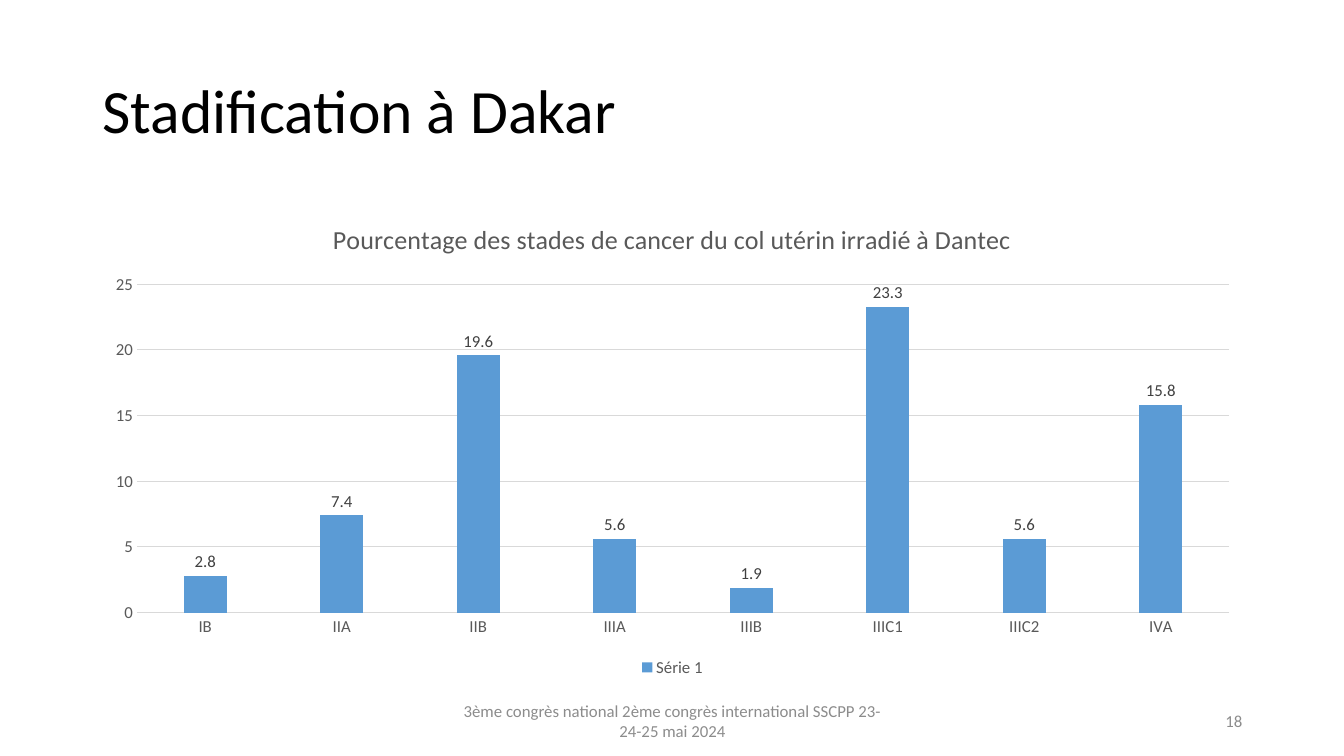
import pptx
import pptx.util
import pptx.chart.data
import pptx.dml.color
import pptx.enum.chart
import pptx.enum.text

Inches, Pt = pptx.util.Inches, pptx.util.Pt
ALIGN = pptx.enum.text.PP_ALIGN
COLORS = {"title": "000000", "footer": "8C8C8C", "axis": "595959",
          "label": "404040", "grid": "D9D9D9", "bar": "5B9BD5"}


def rgb(name):
    return pptx.dml.color.RGBColor.from_string(COLORS[name])


def set_font(font, size, color):
    values = {"name": "Calibri", "size": Pt(size), "bold": False}
    for key, value in values.items():
        setattr(font, key, value)
    font.color.rgb = rgb(color)


prs = pptx.Presentation()
prs.slide_width, prs.slide_height = Inches(13.33), Inches(7.5)
s = prs.slides.add_slide(prs.slide_layouts[6])

# Title, footer and page number
texts = [
    ("Stadification à Dakar", (0.92, 0.4, 11.5, 1.45), 44, "title", ALIGN.LEFT, 0.9),
    ("3ème congrès national 2ème congrès international SSCPP 23-24-25 mai 2024",
     (4.42, 6.95, 4.5, 0.4), 12, "footer", ALIGN.CENTER, 1.0),
    ("18", (9.42, 6.95, 3, 0.4), 12, "footer", ALIGN.RIGHT, 1.0),
]
for text, box, size, color, align, spacing in texts:
    tf = s.shapes.add_textbox(*map(Inches, box)).text_frame
    tf.word_wrap = True
    tf.vertical_anchor = pptx.enum.text.MSO_ANCHOR.MIDDLE
    p = tf.paragraphs[0]
    p.alignment, p.line_spacing = align, spacing
    r = p.add_run()
    r.text = text
    set_font(r.font, size, color)

# Column chart of stages
stages = {"IB": 2.8, "IIA": 7.4, "IIB": 19.6, "IIIA": 5.6,
          "IIIB": 1.9, "IIIC1": 23.3, "IIIC2": 5.6, "IVA": 15.8}
data = pptx.chart.data.CategoryChartData()
data.categories = list(stages)
data.add_series("Série 1", list(stages.values()))
chart = s.shapes.add_chart(
    pptx.enum.chart.XL_CHART_TYPE.COLUMN_CLUSTERED,
    Inches(0.92), Inches(2), Inches(11.5), Inches(4.76), data).chart
set_font(chart.font, 12, "axis")

# Chart title and legend
chart.has_title = True
p = chart.chart_title.text_frame.paragraphs[0]
r = p.add_run()
r.text = "Pourcentage des stades de cancer du col utérin irradié à Dantec"
set_font(r.font, 18.6, "axis")
chart.chart_title.include_in_layout = False
chart.has_legend = True
chart.legend.position = pptx.enum.chart.XL_LEGEND_POSITION.BOTTOM
chart.legend.include_in_layout = False
set_font(chart.legend.font, 12, "axis")

# Bars and data labels
plot = chart.plots[0]
plot.gap_width, plot.overlap, plot.vary_by_categories = 219, -27, False
bars = plot.series[0]
bars.format.fill.solid()
bars.format.fill.fore_color.rgb = rgb("bar")
labels = bars.data_labels
labels.show_value = True
labels.position = pptx.enum.chart.XL_LABEL_POSITION.OUTSIDE_END
set_font(labels.font, 12, "label")

# Axes and gridlines
category, value = chart.category_axis, chart.value_axis
for axis in (category, value):
    axis.major_tick_mark = axis.minor_tick_mark = pptx.enum.chart.XL_TICK_MARK.NONE
    set_font(axis.tick_labels.font, 12, "axis")
value.minimum_scale, value.maximum_scale, value.major_unit = 0, 25, 5
value.has_major_gridlines = True
value.format.line.fill.background()
for line in (category.format.line, value.major_gridlines.format.line):
    line.color.rgb = rgb("grid")
    line.width = Pt(0.75)

prs.save("out.pptx")
